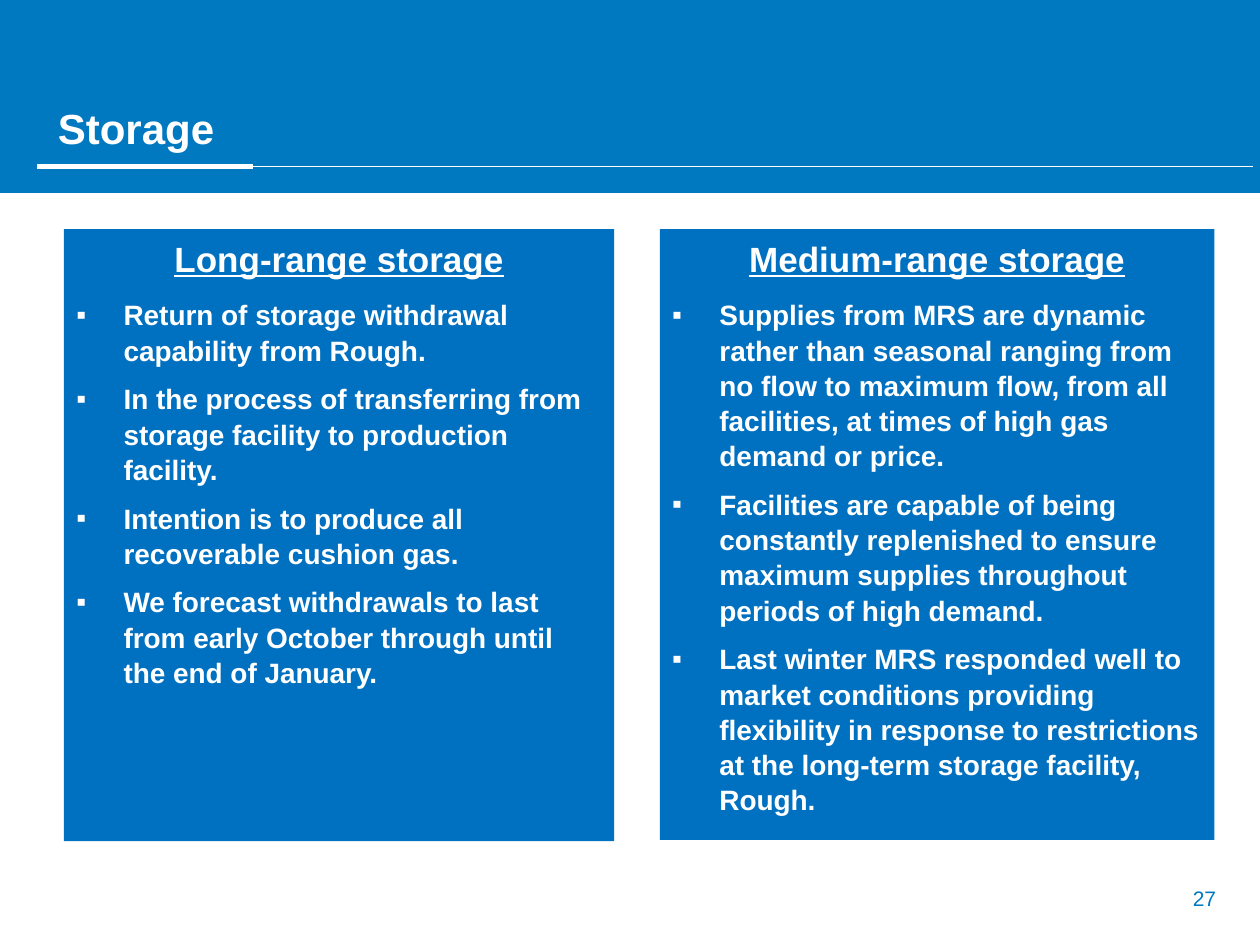
"""Build the storage slide with its title band and two bulleted panels."""
from lxml import etree
from pptx import Presentation
from pptx.dml.color import RGBColor
from pptx.enum.shapes import MSO_CONNECTOR as Connector, MSO_SHAPE as Shape
from pptx.enum.text import MSO_ANCHOR as Anchor, PP_ALIGN as Align
from pptx.oxml.ns import qn
from pptx.util import Pt

WHITE = RGBColor(0xFF, 0xFF, 0xFF)
BAND_BLUE = RGBColor(0x00, 0x79, 0xC1)
PANEL_BLUE = RGBColor(0x00, 0x70, 0xC0)

HEADING = {"size": Pt(20), "bold": True, "underline": True}
BULLET = {"size": Pt(16), "bold": True, "underline": False}
TITLE = {"size": Pt(24), "bold": True}
NUMBER = {"size": Pt(12), "color": BAND_BLUE}

PANELS = [
    ((36.5, 131, 314.5, 349.7), "Long-range storage", [
        "Return of storage withdrawal capability from Rough.",
        "In the process of transferring from storage facility to production facility.",
        "Intention is to produce all recoverable cushion gas.",
        "We forecast withdrawals to last from early October through until the end of January.",
    ]),
    ((377, 131, 317, 349), "Medium-range storage", [
        "Supplies from MRS are dynamic rather than seasonal ranging from no flow to "
        "maximum flow, from all facilities, at times of high gas demand or price.",
        "Facilities are capable of being constantly replenished to ensure maximum "
        "supplies throughout periods of high demand.",
        "Last winter MRS responded well to market conditions providing flexibility in "
        "response to restrictions at the long-term storage facility, Rough.",
    ]),
]
RULES = [(21.5, 716, 0.75), (21, 144.5, 3)]
LABELS = [
    ((534, 502.5, 168, 29), "27", NUMBER, Align.RIGHT, Anchor.TOP),
    ((26, 54, 555, 36.7), "Storage", TITLE, Align.LEFT, Anchor.BOTTOM),
]


def add_block(place, fill):
    block = page.shapes.add_shape(Shape.RECTANGLE, *map(Pt, place))
    block.shadow.inherit = False
    block.fill.solid()
    block.fill.fore_color.rgb = fill
    block.line.fill.background()
    return block


def write(para, text, look, align):
    para.alignment = align
    span = para.add_run()
    span.text = text
    values = {"name": "Arial", "color": WHITE, **look}
    span.font.color.rgb = values.pop("color")
    for key, value in values.items():
        setattr(span.font, key, value)


deck = Presentation()
deck.slide_width, deck.slide_height = Pt(720), Pt(540)
page = deck.slides.add_slide(deck.slide_layouts[6])

for place, heading, points in PANELS:
    frame = add_block(place, PANEL_BLUE).text_frame
    frame.word_wrap = True
    frame.vertical_anchor = Anchor.TOP
    para = frame.paragraphs[0]
    write(para, heading, HEADING, Align.CENTER)
    para.line_spacing, para.space_after = 1.05, Pt(9.6)
    for point in points:
        para = frame.add_paragraph()
        write(para, point, BULLET, Align.LEFT)
        para.line_spacing, para.space_after = 1.05, Pt(7.7)
        props = para._p.get_or_add_pPr()
        props.set("marL", str(Pt(27)))
        props.set("indent", str(Pt(-27)))
        color = etree.SubElement(props, qn("a:buClr"))
        etree.SubElement(color, qn("a:srgbClr"), val=str(WHITE))
        etree.SubElement(props, qn("a:buFont"), typeface="Arial")
        etree.SubElement(props, qn("a:buChar"), char="▪")

add_block((0, -3, 720, 113.2), BAND_BLUE)

for start, end, width in RULES:
    rule = page.shapes.add_connector(Connector.STRAIGHT, Pt(start), Pt(95), Pt(end), Pt(95))
    rule.line.color.rgb = WHITE
    rule.line.width = Pt(width)
    etree.SubElement(rule._element.spPr, qn("a:effectLst"))

for place, text, look, align, anchor in LABELS:
    box = page.shapes.add_textbox(*map(Pt, place))
    box.text_frame.word_wrap = True
    box.text_frame.vertical_anchor = anchor
    write(box.text_frame.paragraphs[0], text, look, align)

deck.save("out.pptx")
